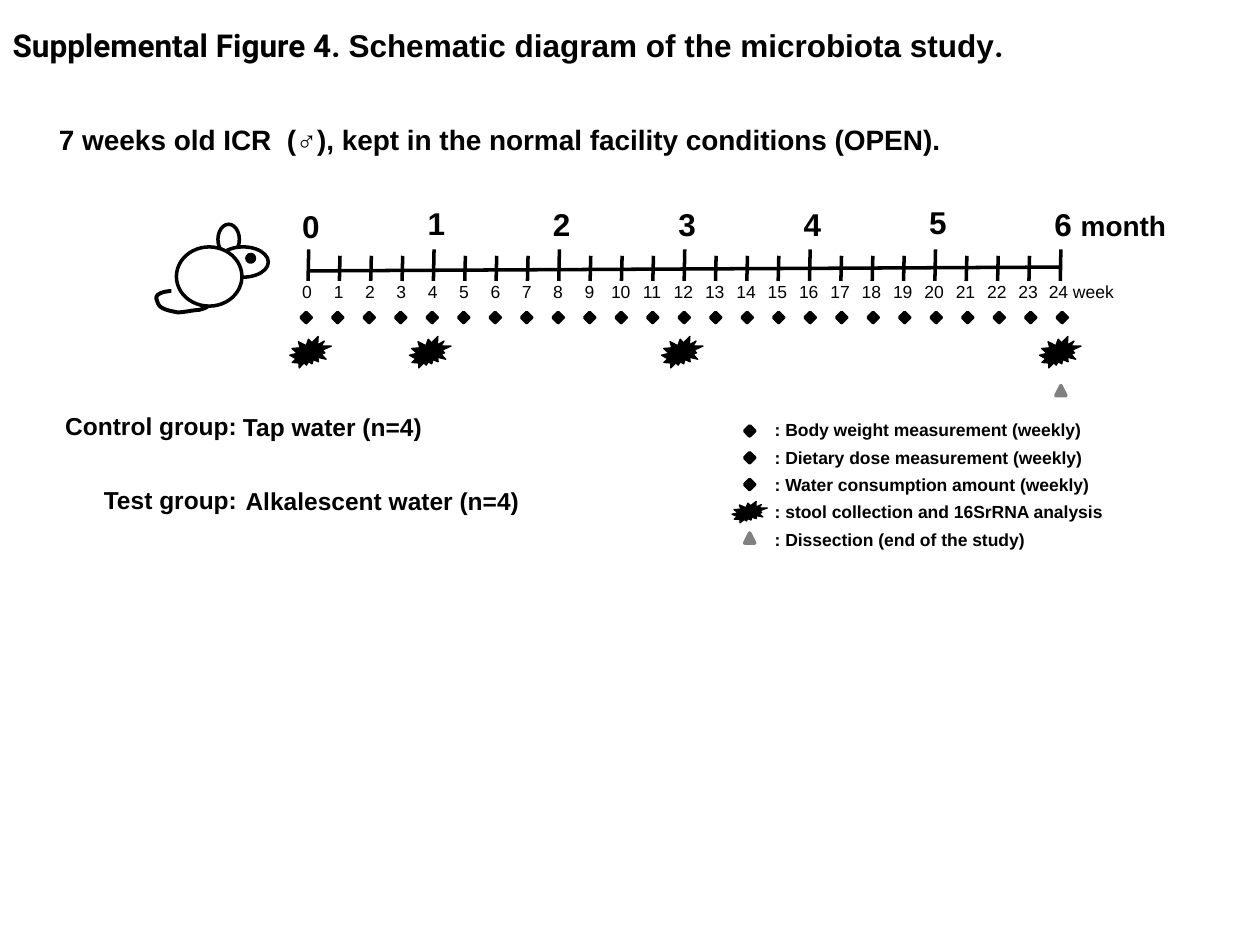
from lxml.etree import SubElement
from pptx import Presentation
from pptx.dml.color import RGBColor
from pptx.enum.shapes import MSO_CONNECTOR, MSO_SHAPE
from pptx.enum.text import MSO_ANCHOR, MSO_AUTO_SIZE, PP_ALIGN
from pptx.oxml.ns import qn
from pptx.util import Inches, Pt

BLACK = RGBColor(0x00, 0x00, 0x00)
WHITE = RGBColor(0xFF, 0xFF, 0xFF)
GRAY = RGBColor(0x80, 0x80, 0x80)

# Grid of 40 columns by 30 rows; every length below is in cells
COLUMNS, ROWS = 40, 30
CELL = Inches(0.25)
MARK = 0.32


class Schematic:
    """Holds the style and the current slide; one method per kind of element."""

    font = {"name": "Arial", "bold": True}
    frame = {"word_wrap": True, "auto_size": MSO_AUTO_SIZE.SHAPE_TO_FIT_TEXT,
             "vertical_anchor": MSO_ANCHOR.TOP}

    def __init__(self, deck):
        self.slide = deck.slides.add_slide(deck.slide_layouts[5])
        self.shapes = self.slide.shapes

    @staticmethod
    def cells(*values):
        return [round(value * CELL) for value in values]

    @staticmethod
    def apply(target, values):
        for name, value in values.items():
            setattr(target, name, value)

    def set_text(self, text_frame, paragraphs, size, paragraph_format=None, **font):
        """Each paragraph is a list of (text, font values that differ)."""
        self.apply(text_frame, self.frame)
        for index, runs in enumerate(paragraphs):
            paragraph = text_frame.add_paragraph() if index else text_frame.paragraphs[0]
            self.apply(paragraph, {"alignment": PP_ALIGN.LEFT, **(paragraph_format or {})})
            for words, changes in runs:
                run = paragraph.add_run()
                run.text = words
                run.font.color.rgb = BLACK
                self.apply(run.font, {**self.font, "size": Pt(size), **font, **changes})

    def title(self, box, runs, size):
        title = self.shapes.title
        self.apply(title, dict(zip(("left", "top", "width", "height"), self.cells(*box))))
        self.set_text(title.text_frame, [runs], size)

    def text(self, box, paragraphs, size, paragraph_format=None, **font):
        text_frame = self.shapes.add_textbox(*self.cells(*box)).text_frame
        self.set_text(text_frame, paragraphs, size, paragraph_format, **font)
        return text_frame

    def tab_stops(self, paragraph, stops):
        tab_list = SubElement(paragraph._p.get_or_add_pPr(), qn("a:tabLst"))
        for position, alignment in stops:
            SubElement(tab_list, qn("a:tab"), pos=str(self.cells(position)[0]), algn=alignment)

    def line(self, start, end):
        line = self.shapes.add_connector(MSO_CONNECTOR.STRAIGHT, *self.cells(*start, *end))
        line.line.color.rgb = BLACK
        line.line.width = Pt(2)
        SubElement(line._element.spPr, qn("a:effectLst"))

    def shape(self, kind, box, fill=BLACK, outline=BLACK, width=2, parent=None):
        shape = (parent or self.shapes).add_shape(kind, *self.cells(*box))
        shape.shadow.inherit = False
        shape.fill.solid()
        shape.fill.fore_color.rgb = fill
        shape.line.color.rgb = outline
        shape.line.width = Pt(width)

    def diamond(self, left, top):
        self.shape(MSO_SHAPE.DIAMOND, (left, top, MARK, MARK))

    def triangle(self, left, top):
        self.shape(MSO_SHAPE.ISOSCELES_TRIANGLE, (left, top, MARK, MARK), GRAY, GRAY)

    def burst(self, left, top, width=1.32, height=1):
        self.shape(MSO_SHAPE.EXPLOSION2, (left, top, width, height), width=0.75)

    def curve(self, start, segments, parent, steps=8):
        """Open outline through cubic segments (control, control, end)."""
        points, origin = [], start
        for first, second, end in segments:
            for step in range(1, steps + 1):
                t = step / steps
                weights = (1 - t) ** 3, 3 * t * (1 - t) ** 2, 3 * t * t * (1 - t), t ** 3
                knots = origin, first, second, end
                points.append([sum(w * k[axis] for w, k in zip(weights, knots))
                               for axis in (0, 1)])
            origin = end
        builder = parent.build_freeform(*self.cells(*start))
        builder.add_line_segments([self.cells(*point) for point in points], close=False)
        outline = builder.convert_to_shape()
        outline.shadow.inherit = False
        outline.fill.background()
        outline.line.color.rgb = BLACK
        outline.line.width = Pt(2.25)


def main():
    deck = Presentation()
    deck.slide_width, deck.slide_height = COLUMNS * CELL, ROWS * CELL
    study = Schematic(deck)

    # Heading and animals
    roboto = {"name": "Roboto"}
    study.title((0, 0.64, 34.76, 1.6),
                [("Supplemental Figure 4. ", roboto),
                 ("Schematic diagram of the microbiota study", {}), (".", roboto)], 18)
    animals = "7 weeks old ICR  (♂), kept in the normal facility conditions (OPEN)."
    study.text((1.48, 3.68, 34.92, 1.48), [[(animals, {})]], 16)

    # Groups: name at the right edge of its box, treatment beside it
    groups = [("Control group:", 12.84, "Tap water (n=4)", 7.32, 12.88),
              ("Test group:", 15.2, "Alkalescent water (n=4)", 7.4, 15.24)]
    for group, group_top, water, water_left, water_top in groups:
        study.text((1.36, group_top, 6.56, 1.36), [[(group, {})]], 14,
                   {"alignment": PP_ALIGN.RIGHT})
        study.text((water_left, water_top, 15, 1.36), [[(water, {})]], 14)

    # Time axis: a tick each week, a taller one each fourth week
    axis_left, week_step, last_week = 9.8, 0.995, 24
    study.line((axis_left, 8.6), (axis_left + last_week * week_step, 8.48))
    for week in range(last_week + 1):
        tick = axis_left + week * week_step
        study.line((tick, 8.12 if week % 4 else 7.92), (tick - 0.02, 8.92))
        study.diamond(9.56 + week, 9.92)

    # Month numbers
    month_tops = [6.36, 6.28, 6.32, 6.32, 6.32, 6.24, 6.32]
    for month, top in enumerate(month_tops):
        last = month == len(month_tops) - 1
        runs = [("6 ", {}), ("month", {"size": Pt(16)})] if last else [(str(month), {})]
        study.text((9.2 + month * 3.98, top, 4.88 if last else 1.4, 1.6), [runs], 18)

    # Week numbers, centred under their ticks by tab stops
    weeks = "\t".join(str(week) for week in range(last_week + 1)) + " week"
    week_row = study.text((9.2, 8.72, 27.8, 1.08), [[(weeks, {})]], 10, bold=False)
    stops = [(0.16 + week * week_step, "ctr") for week in range(1, last_week)]
    study.tab_stops(week_row.paragraphs[0], stops + [(23.7, "l")])

    # Stool collections and dissection
    for left in (9.2, 13, 21, 33):
        study.burst(left, 10.68)
    study.triangle(33.52, 12.24)

    # Legend
    legend = [": Body weight measurement (weekly)", ": Dietary dose measurement (weekly)",
              ": Water consumption amount (weekly)", ": stool collection and 16SrRNA analysis",
              ": Dissection (end of the study)"]
    study.text((24.2, 13.24, 15.48, 4.44), [[(entry, {})] for entry in legend], 10,
               {"line_spacing": 0.8, "space_after": Pt(6)})
    key_left, key_top, key_step = 23.64, 13.52, 0.85
    for row in range(3):
        study.diamond(key_left, key_top + row * key_step)
    study.burst(23.24, 15.92, 1.12, 0.68)
    study.triangle(key_left, key_top + 4 * key_step)

    # Mouse: ear, head, body, eye and tail
    mouse = study.shapes.add_group_shape().shapes
    for box, fill in [((6.92, 7.12, 0.68, 0.96), WHITE), ((6.92, 7.84, 1.6, 0.96), WHITE),
                      ((5.6, 7.84, 2.08, 1.88), WHITE), ((7.84, 8.08, 0.24, 0.24), BLACK)]:
        study.shape(MSO_SHAPE.OVAL, box, fill, parent=mouse)
    study.curve((6.64, 9.44),
                [((6.64, 9.56), (6.64, 9.64), (6.6, 9.72)),
                 ((6.56, 9.76), (6.48, 9.8), (6.32, 9.84)),
                 ((6.16, 9.84), (5.84, 9.92), (5.64, 9.92)),
                 ((5.44, 9.88), (5.24, 9.84), (5.12, 9.76)),
                 ((5, 9.68), (5, 9.56), (4.96, 9.48)),
                 ((4.96, 9.4), (5, 9.36), (5.08, 9.32)),
                 ((5.12, 9.28), (5.36, 9.24), (5.44, 9.24))], mouse)

    deck.save("out.pptx")


if __name__ == "__main__":
    main()
